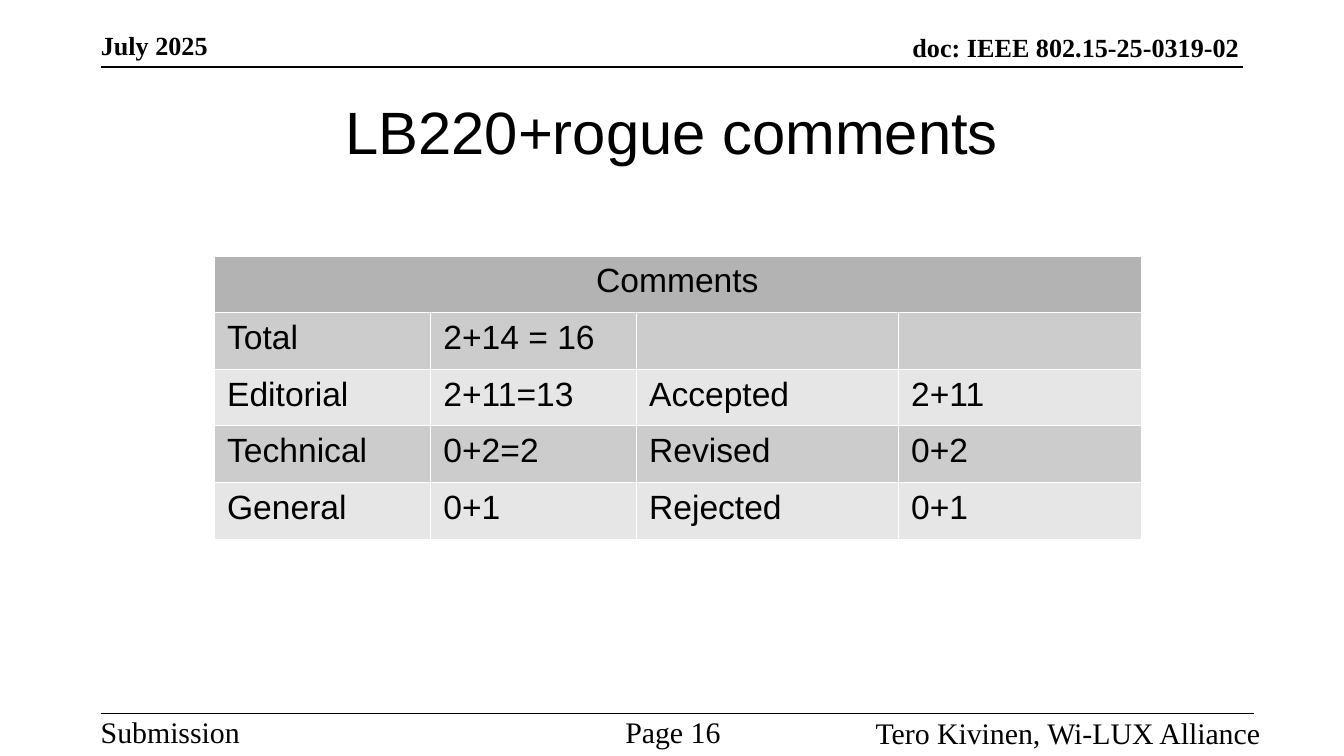
from dataclasses import dataclass

from lxml import etree
from pptx import Presentation, util as u
from pptx.dml.color import RGBColor
from pptx.enum import shapes, text
from pptx.oxml import ns

Pt = u.Pt
ALIGN = text.PP_ALIGN
ANCHOR = text.MSO_ANCHOR


@dataclass(frozen=True)
class Theme:
    ink: str = "000000"
    border: str = "FFFFFF"
    heading_fill: str = "B3B3B3"
    bands: tuple = ("CCCCCC", "E6E6E6")
    serif: str = "Times New Roman"
    sans: str = "Arial"
    title_size: int = 32
    table_size: int = 18
    footer_size: int = 16
    header_size: int = 14
    rule_width: float = 1
    border_width: float = 0.06


THEME = Theme()
HEADER = {"name": THEME.serif, "size": Pt(THEME.header_size), "bold": True}
FOOTER = {"name": THEME.serif, "size": Pt(THEME.footer_size), "bold": False}
TITLE = {"name": THEME.sans, "size": Pt(THEME.title_size), "bold": False}
TABLE = {"name": THEME.sans, "size": Pt(THEME.table_size), "bold": False}

LABELS = [
    ("July 2025", (54, 21.6, 200.9, 10.8), HEADER, ALIGN.LEFT, ANCHOR.BOTTOM),
    ("doc: IEEE 802.15-25-0319-02", (244.1, 23, 419.8, 10.8), HEADER, ALIGN.RIGHT, ANCHOR.BOTTOM),
    ("LB220+rogue comments", (36, 36, 648, 67.7), TITLE, ALIGN.CENTER, ANCHOR.MIDDLE),
    ("Submission", (54, 382.3, 134.6, 16.6), FOOTER, ALIGN.LEFT, ANCHOR.TOP),
    ("Page 16 ", (295.2, 382.3, 134.6, 16.6), FOOTER, ALIGN.CENTER, ANCHOR.TOP),
    ("Tero Kivinen, Wi-LUX Alliance", (411.1, 383, 264.2, 16.6), FOOTER, ALIGN.RIGHT, ANCHOR.TOP),
]
RULES = [(54, 666, 36), (54, 671.8, 382.3)]
COLUMNS = [115.9, 110.2, 140.4, 130.3]
ROW_HEIGHT = 30.35
ROWS = [
    ("Comments", "", "", ""),
    ("Total", "2+14 = 16", "", ""),
    ("Editorial", "2+11=13", "Accepted", "2+11"),
    ("Technical", "0+2=2", "Revised", "0+2"),
    ("General", "0+1", "Rejected", "0+1"),
]


def apply(target, values):
    for name, value in values.items():
        setattr(target, name, value)


def write(paragraph, words, font, alignment):
    paragraph.alignment = alignment
    apply(paragraph.font, font)
    if words:
        run = paragraph.add_run()
        run.text = words
        apply(run.font, font)
        run.font.color.rgb = RGBColor.from_string(THEME.ink)


def add_label(slide, words, box, font, alignment, anchor):
    frame = slide.shapes.add_textbox(*map(Pt, box)).text_frame
    apply(frame, {
        "word_wrap": True, "vertical_anchor": anchor,
        "margin_left": 0, "margin_right": 0, "margin_top": 0, "margin_bottom": 0,
    })
    write(frame.paragraphs[0], words, font, alignment)


def add_rule(slide, left, right, top):
    rule = slide.shapes.add_connector(
        shapes.MSO_CONNECTOR.STRAIGHT, Pt(left), Pt(top), Pt(right), Pt(top))
    rule.line.color.rgb = RGBColor.from_string(THEME.ink)
    rule.line.width = Pt(THEME.rule_width)
    etree.SubElement(rule.element.spPr, ns.qn("a:effectLst"))


def add_borders(cell):
    properties = cell._tc.get_or_add_tcPr()
    for position, side in enumerate(("a:lnL", "a:lnR", "a:lnT", "a:lnB")):
        line = etree.Element(ns.qn(side), w=str(Pt(THEME.border_width)))
        fill = etree.SubElement(line, ns.qn("a:solidFill"))
        etree.SubElement(fill, ns.qn("a:srgbClr"), val=THEME.border)
        properties.insert(position, line)


def format_cell(cell, words, fill, alignment):
    apply(cell, {
        "margin_left": Pt(7.2), "margin_right": Pt(7.2),
        "margin_top": Pt(3.6), "margin_bottom": Pt(3.6),
    })
    cell.fill.solid()
    cell.fill.fore_color.rgb = RGBColor.from_string(fill)
    add_borders(cell)
    write(cell.text_frame.paragraphs[0], words, TABLE, alignment)


def add_comment_table(slide, left, top):
    table = slide.shapes.add_table(
        len(ROWS), len(COLUMNS), Pt(left), Pt(top),
        Pt(sum(COLUMNS)), Pt(ROW_HEIGHT * len(ROWS))).table
    apply(table, {"first_row": False, "horz_banding": False})
    for column, width in zip(table.columns, COLUMNS):
        column.width = Pt(width)
    for index, words in enumerate(ROWS):
        table.rows[index].height = Pt(ROW_HEIGHT)
        fill = THEME.bands[(index - 1) % 2] if index else THEME.heading_fill
        alignment = ALIGN.LEFT if index else ALIGN.CENTER
        for cell, value in zip(table.rows[index].cells, words):
            format_cell(cell, value, fill, alignment)
    table.cell(0, 0).merge(table.cell(0, len(COLUMNS) - 1))


def main():
    presentation = Presentation()
    apply(presentation, {"slide_width": Pt(720), "slide_height": Pt(405)})
    slide = presentation.slides.add_slide(presentation.slide_layouts[6])
    for rule in RULES:
        add_rule(slide, *rule)
    for label in LABELS:
        add_label(slide, *label)
    add_comment_table(slide, 114.5, 137)
    presentation.save("out.pptx")


if __name__ == "__main__":
    main()
